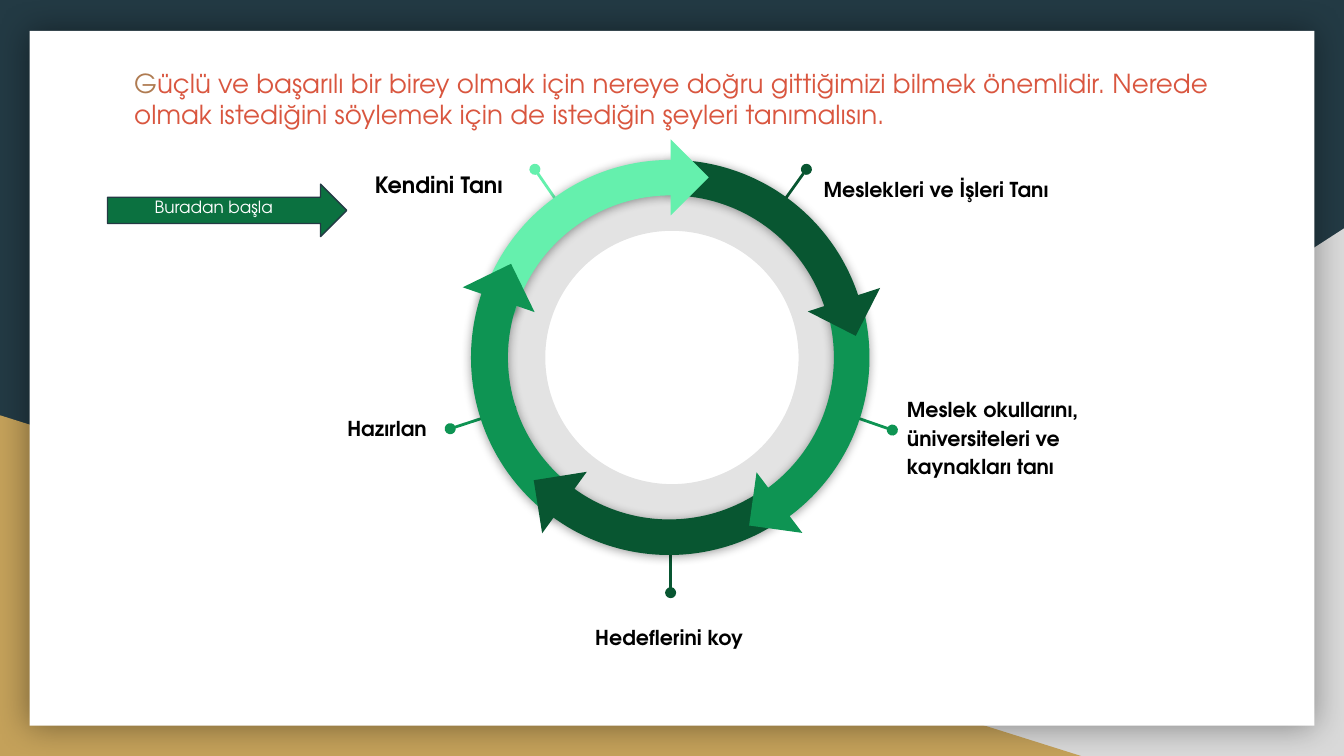
from lxml import etree
from pptx import Presentation, util as u
from pptx.dml.color import RGBColor
from pptx.enum import shapes, text
from pptx.oxml.ns import qn

FONT = "TeX Gyre Adventor"
NAVY, GOLD, GREY = "233A44", "C4A15A", "D9D9D9"
DARK, MID, LIGHT = "085631", "0E9453", "65F0AD"
KIND = shapes.MSO_SHAPE
LEFT, CENTER, RIGHT = text.PP_ALIGN.LEFT, text.PP_ALIGN.CENTER, text.PP_ALIGN.RIGHT

prs = Presentation()
prs.slide_width = u.Inches(10)
prs.slide_height = prs.slide_width * 9 // 16
s = prs.slides.add_slide(prs.slide_layouts[6])
s.background.fill.solid()
s.background.fill.fore_color.rgb = RGBColor.from_string(NAVY)


def add_shape(kind, x, y, w, h, fill, line=None, adj=(), rot=0, blur=0, dist=0):
    """Add a filled preset shape; blur and dist (points) give a soft shadow."""
    sp = s.shapes.add_shape(kind, *map(u.Inches, (x, y, w, h)))
    sp.shadow.inherit = False
    sp.rotation = rot
    sp.fill.solid()
    sp.fill.fore_color.rgb = RGBColor.from_string(fill)
    if line:
        sp.line.color.rgb = RGBColor.from_string(line)
        sp.line.width = u.Pt(0.75)
    else:
        sp.line.fill.background()
    for i, value in enumerate(adj):
        sp.adjustments[i] = value
    if blur:
        effects = sp._element.spPr.find(qn("a:effectLst"))
        shadow = etree.SubElement(effects, qn("a:outerShdw"), blurRad=str(u.Pt(blur)),
                                  dist=str(u.Pt(dist)), dir="5400000", rotWithShape="0")
        color = etree.SubElement(shadow, qn("a:srgbClr"), val="000000")
        etree.SubElement(color, qn("a:alpha"), val="40000")
    return sp


def add_text(runs, x, y, w, h, size, align=LEFT, bold=False, spacing=1.0):
    """Add a text box; runs are (text, colour) pairs."""
    tf = s.shapes.add_textbox(*map(u.Inches, (x, y, w, h))).text_frame
    tf.word_wrap = True
    tf.margin_left = tf.margin_right = tf.margin_top = tf.margin_bottom = u.Inches(0.1)
    p = tf.paragraphs[0]
    p.alignment, p.line_spacing = align, spacing
    for words, color in runs:
        r = p.add_run()
        r.text = words
        r.font.name, r.font.size, r.font.bold = FONT, u.Pt(size), bold
        r.font.color.rgb = RGBColor.from_string(color)


# Backdrop
corner = add_shape(KIND.RIGHT_TRIANGLE, 3.92, 1.7, 6.08, 3.93, GREY)
corner._element.spPr.find(qn("a:xfrm")).set("flipH", "1")
add_shape(KIND.RIGHT_TRIANGLE, 0, 3.09, 8.06, 2.54, GOLD)
add_shape(KIND.RECTANGLE, 0.22, 0.23, 9.56, 5.17, "FFFFFF", blur=18)

add_text([("G", "AF7B51"),
          ("üçlü ve başarılı bir birey olmak için nereye doğru gittiğimizi bilmek "
           "önemlidir. Nerede olmak istediğini söylemek için de istediğin şeyleri "
           "tanımalısın.", "D9563F")], 0.9, 0.4, 8.21, 0.64, 14)

# Pale inner ring
ring = add_shape(KIND.DONUT, 3.61, 1.27, 2.78, 2.78, "000000", adj=[0.161])
ring_color = ring._element.spPr.find(qn("a:solidFill"))[0]
etree.SubElement(ring_color, qn("a:alpha"), val="11000")

# Pointers, from the dot to the ring
pointers = [
    (6, 1.26, 5.7, 1.68, DARK),
    (3.98, 1.26, 4.27, 1.68, LIGHT),
    (6.64, 3.2, 6.15, 3.03, MID),
    (3.35, 3.19, 3.84, 3.03, MID),
    (4.99, 4.41, 4.99, 3.87, DARK),
]
for x1, y1, x2, y2, color in pointers:
    line = s.shapes.add_connector(shapes.MSO_CONNECTOR.STRAIGHT,
                                  *map(u.Inches, (x1, y1, x2, y2)))
    line.line.color.rgb = RGBColor.from_string(color)
    line.line.width = u.Pt(1.5)
    etree.SubElement(line.line._get_or_add_ln(), qn("a:headEnd"), type="oval")
    etree.SubElement(line._element.spPr, qn("a:effectLst"))

# Step labels: words, left, top, width, size, alignment
labels = [
    ("Meslekleri ve İşleri Tanı", 6.03, 1.19, 1.96, 11, LEFT),
    ("Kendini Tanı", 2.2, 1.14, 1.64, 12, RIGHT),
    ("Meslek okullarını, üniversiteleri ve kaynakları tanı", 6.65, 2.83, 1.97, 11, LEFT),
    ("Hazırlan", 2.06, 2.97, 1.64, 11, CENTER),
    ("Hedeflerini koy", 4.16, 4.52, 1.64, 11, CENTER),
]
for words, x, y, w, size, align in labels:
    add_text([(words, "000000")], x, y, w, 0.73, size, align, True, 1.15)

# Cycle: left edge, then the clockwise start and end angles in degrees
arcs = [
    (3.52, 270.2, 346.6, DARK, None),
    (3.53, 346.3, 53.7, MID, None),
    (3.52, 195.8, 271.1, LIGHT, None),
    (3.51, 126.4, 200.1, MID, MID),
    (3.51, 56.5, 127.7, DARK, None),
]
for x, start, end, color, outline in arcs:
    # Angles are stored in 60000ths of a degree, adjustments in 100000ths
    add_shape(KIND.BLOCK_ARC, x, 1.19, 2.94, 2.94, color, line=outline,
              adj=[start * 0.6, end * 0.6, 0.09], blur=5.6, dist=0.8)

arrowheads = [
    (6.08, 2.03, 297, DARK),
    (3.51, 2.03, 154, MID),
    (5.6, 3.54, 7.9, MID),
    (4, 3.54, 81, DARK),
    (4.79, 1.12, 225, LIGHT),
]
for x, y, rot, color in arrowheads:
    add_shape(KIND.RIGHT_TRIANGLE, x, y, 0.4, 0.4, color, rot=rot)

# Starting point
add_shape(KIND.RIGHT_ARROW, 0.8, 1.37, 1.78, 0.39, "0B7140", line=NAVY, adj=[0.5, 0.5])
add_text([("Buradan başla", "FFFFFF")], 0.9, 1.39, 1.38, 0.45, 9, CENTER)

prs.save("out.pptx")
